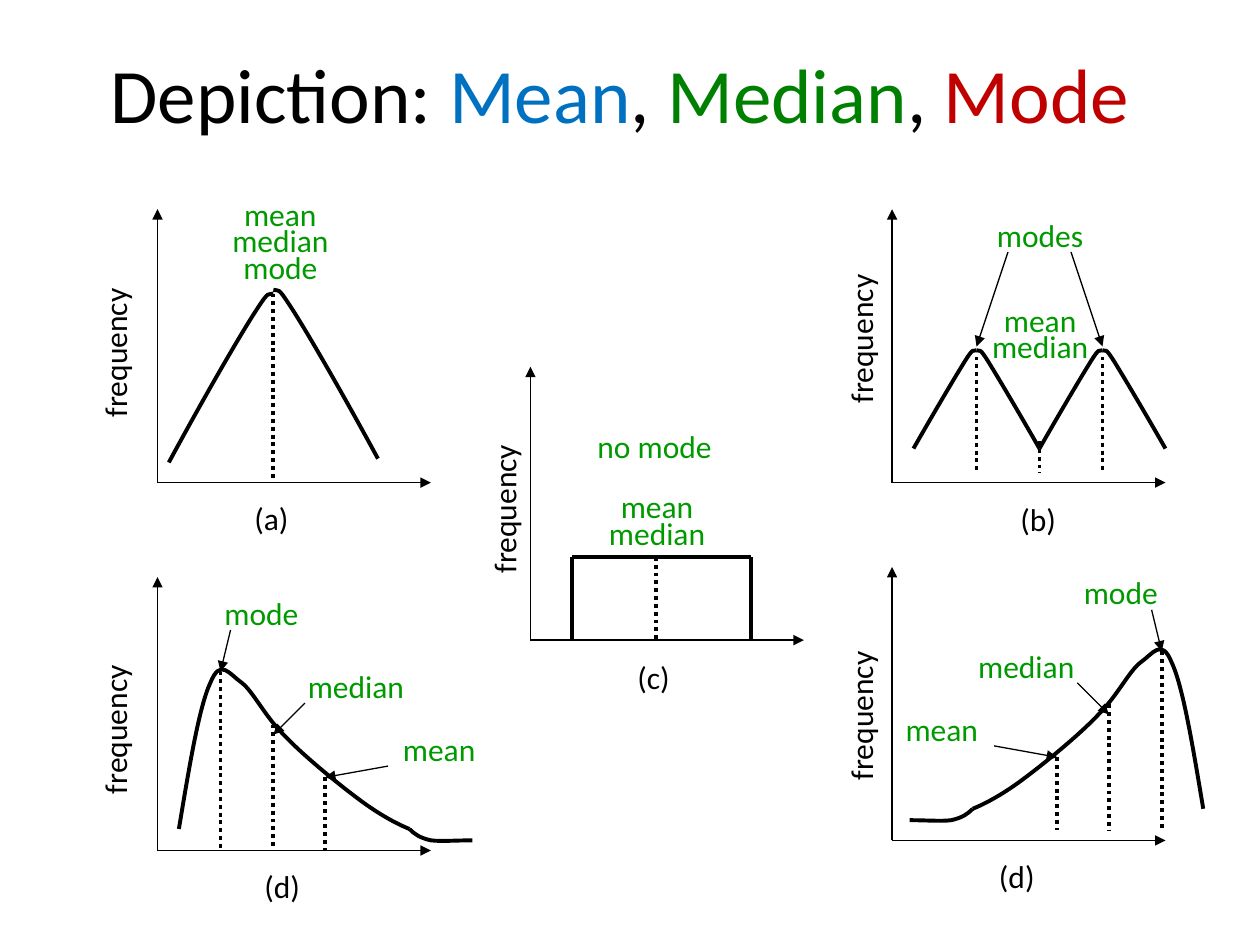
from lxml import etree
from pptx import Presentation
from pptx import util as u
from pptx.dml.color import RGBColor
from pptx.enum import dml, shapes, text
from pptx.oxml import ns

BLACK = RGBColor(0x00, 0x00, 0x00)
BLUE = RGBColor(0x00, 0x70, 0xC0)
DARK_GREEN = RGBColor(0x00, 0x80, 0x00)
GREEN = RGBColor(0x00, 0x99, 0x00)
RED = RGBColor(0xC0, 0x00, 0x00)
FONT = "Calibri"
INCH = 2.54
AXIS = 2.17

deck = Presentation()
deck.slide_width = u.Cm(10 * INCH)
deck.slide_height = u.Cm(7.5 * INCH)
slide = deck.slides.add_slide(deck.slide_layouts[6])


def draw_line(x1, y1, x2, y2, weight=2.25, dotted=False, arrow=False):
    ends = [u.Cm(v * INCH) for v in (x1, y1, x2, y2)]
    stroke = slide.shapes.add_connector(shapes.MSO_CONNECTOR.STRAIGHT, *ends)
    stroke.line.color.rgb = BLACK
    stroke.line.width = u.Pt(weight)
    if dotted:
        stroke.line.dash_style = dml.MSO_LINE.ROUND_DOT
    if arrow:
        tip = etree.SubElement(stroke.line._get_or_add_ln(), ns.qn("a:tailEnd"))
        tip.set("type", "triangle")
    etree.SubElement(stroke._element.spPr, ns.qn("a:effectLst"))


def draw_curve(points):
    corners = [(u.Cm(x * INCH), u.Cm(y * INCH)) for x, y in points]
    builder = slide.shapes.build_freeform(*corners[0])
    builder.add_line_segments(corners[1:], close=False)
    curve = builder.convert_to_shape()
    curve.shadow.inherit = False
    curve.fill.background()
    curve.line.color.rgb = BLACK
    curve.line.width = u.Pt(2.25)
    outline = curve._element.find(".//" + ns.qn("a:path"))
    steps = outline.findall(ns.qn("a:lnTo"))
    for first in range(0, len(steps), 3):
        bezier = etree.SubElement(outline, ns.qn("a:cubicBezTo"))
        for step in steps[first:first + 3]:
            bezier.append(step[0])
            outline.remove(step)


title = slide.shapes.add_textbox(*[u.Cm(v * INCH) for v in (0.42, 0.11, 9, 1.25)])
title.text_frame.word_wrap = True
title.text_frame.vertical_anchor = text.MSO_ANCHOR.MIDDLE
heading = title.text_frame.paragraphs[0]
heading.alignment = text.PP_ALIGN.CENTER
heading.font.size = u.Pt(44)
heading.font.name = FONT
for words, color in [("Depiction: ", BLACK), ("Mean", BLUE), (", ", BLACK),
                     ("Median", DARK_GREEN), (", ", BLACK), ("Mode", RED)]:
    run = heading.add_run()
    run.text = words
    run.font.color.rgb = color

for x, y in [(1.25, 3.83), (7.08, 3.83), (4.21, 5.08), (1.25, 6.75), (7.08, 6.67)]:
    draw_line(x, y, x, y - AXIS, 0.75, arrow=True)
    draw_line(x, y, x + AXIS, y, 0.75, arrow=True)

bell = [(0.83, 3.64), (0.57, 3.16), (0.3, 2.69), (0.16, 2.47),
        (0.02, 2.25), (0.05, 2.32), (0, 2.3)]
for side, drop in [(-1, 0.03), (1, 0)]:
    draw_curve([(2.17 + side * dx, y + drop) for dx, y in bell])
draw_line(2.17, 2.33, 2.17, 3.83, dotted=True)

hump = [(0.5, 3.56), (0.34, 3.28), (0.18, 3.01), (0.1, 2.88),
        (0.02, 2.75), (0.03, 2.79), (0, 2.78)]
for peak, arrow_start in [(7.75, 8), (8.75, 8.5)]:
    for side in (-1, 1):
        draw_curve([(peak + side * dx, y) for dx, y in hump])
    draw_line(peak, 2.83, peak, 3.75, dotted=True)
    draw_line(arrow_start, 2, peak, 2.75, 0.75, arrow=True)
draw_line(8.25, 3.5, 8.25, 3.75, dotted=True)

draw_line(4.54, 4.42, 5.96, 4.42)
for x in (4.54, 5.96):
    draw_line(x, 5.08, x, 4.42)
draw_line(5.21, 4.42, 5.21, 5.08, dotted=True)

slope = [(1.42, 6.58), (1.5, 6.1), (1.58, 5.61), (1.67, 5.42), (1.75, 5.22),
         (1.82, 5.35), (1.92, 5.42), (2.01, 5.49), (2.1, 5.68), (2.25, 5.83),
         (2.4, 5.99), (2.67, 6.21), (2.83, 6.33), (3, 6.46), (3.15, 6.54), (3.25, 6.58)]
tail = [(3.25, 6.58), (3.29, 6.62), (3.33, 6.65), (3.42, 6.67),
        (3.5, 6.68), (3.62, 6.67), (3.75, 6.67)]
drops = [(1.75, 5.33), (2.17, 5.75), (2.58, 6.17)]
pointers = [(1.83, 5, 1.75, 5.33), (2.42, 5.58, 2.17, 5.83), (3.08, 6.08, 2.58, 6.17)]
for origin, side, lift in [(0, 1, 0), (10.97, -1, 0.16)]:
    for part in (slope, tail):
        draw_curve([(origin + side * x, y - lift) for x, y in part])
    for x, y in drops:
        draw_line(origin + side * x, y - lift, origin + side * x, 6.75 - lift, dotted=True)
    for x1, y1, x2, y2 in pointers:
        draw_line(origin + side * x1, y1 - lift, origin + side * x2, y2 - lift,
                  0.75, arrow=True)

labels = [
    ("mean\nmedian\nmode", 1.72, 1.58, 1.01, GREEN),
    ("mean\nmedian", 7.75, 2.42, 1.01, GREEN),
    ("modes", 7.81, 1.75, 0.89, GREEN),
    ("mean\nmedian", 4.71, 3.9, 1.01, GREEN),
    ("no mode", 4.62, 3.42, 1.15, GREEN),
    ("mode", 1.67, 4.75, 0.81, GREEN),
    ("median", 2.32, 5.33, 1.01, GREEN),
    ("mean", 3.09, 5.83, 0.79, GREEN),
    ("mode", 8.49, 4.58, 0.81, GREEN),
    ("median", 7.64, 5.17, 1.01, GREEN),
    ("mean", 7.08, 5.67, 0.79, GREEN),
    ("(a)", 1.92, 3.91, 0.48, BLACK),
    ("(b)", 8, 3.92, 0.49, BLACK),
    ("(c)", 4.96, 5.17, 0.46, BLACK),
    ("(d)", 2, 6.83, 0.49, BLACK),
    ("(d)", 7.83, 6.75, 0.49, BLACK),
]
for x, y in [(0.29, 2.59), (0.29, 5.58), (6.21, 2.48), (6.21, 5.47), (3.38, 3.83)]:
    labels.append(("frequency", x, y, 1.24, BLACK))

for words, x, y, width, color in labels:
    height = 0.31 + 0.21 * words.count("\n") if color == GREEN else 0.4
    label = slide.shapes.add_textbox(*[u.Cm(v * INCH) for v in (x, y, width, height)])
    label.rotation = 270 if words == "frequency" else 0
    frame = label.text_frame
    frame.word_wrap = False
    frame.auto_size = text.MSO_AUTO_SIZE.SHAPE_TO_FIT_TEXT
    frame.text = words
    for paragraph in frame.paragraphs:
        paragraph.font.name = FONT
        paragraph.font.size = u.Pt(18)
        paragraph.font.color.rgb = color
        if color == GREEN:
            paragraph.alignment = text.PP_ALIGN.CENTER
            paragraph.line_spacing = 0.7

deck.save("out.pptx")
